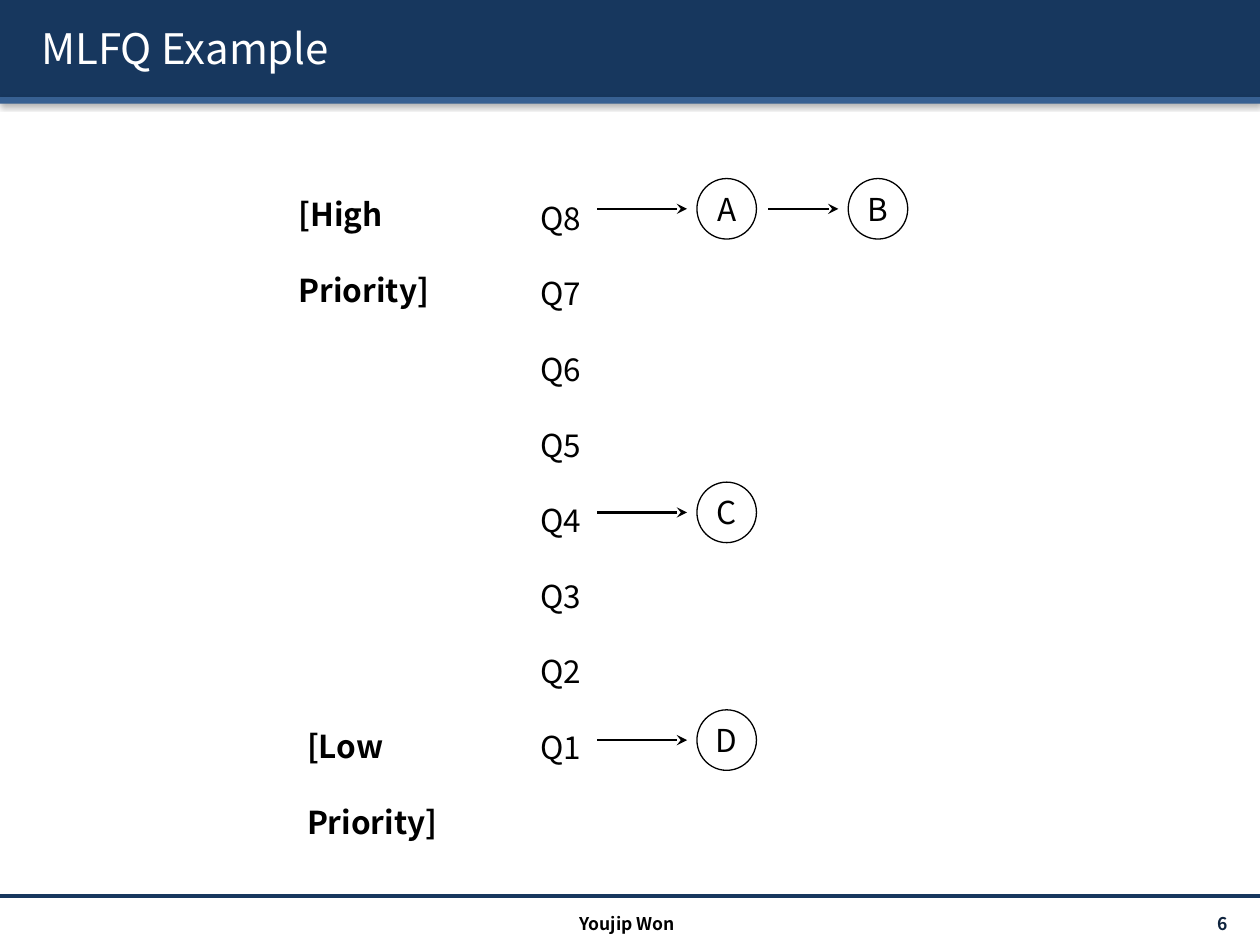
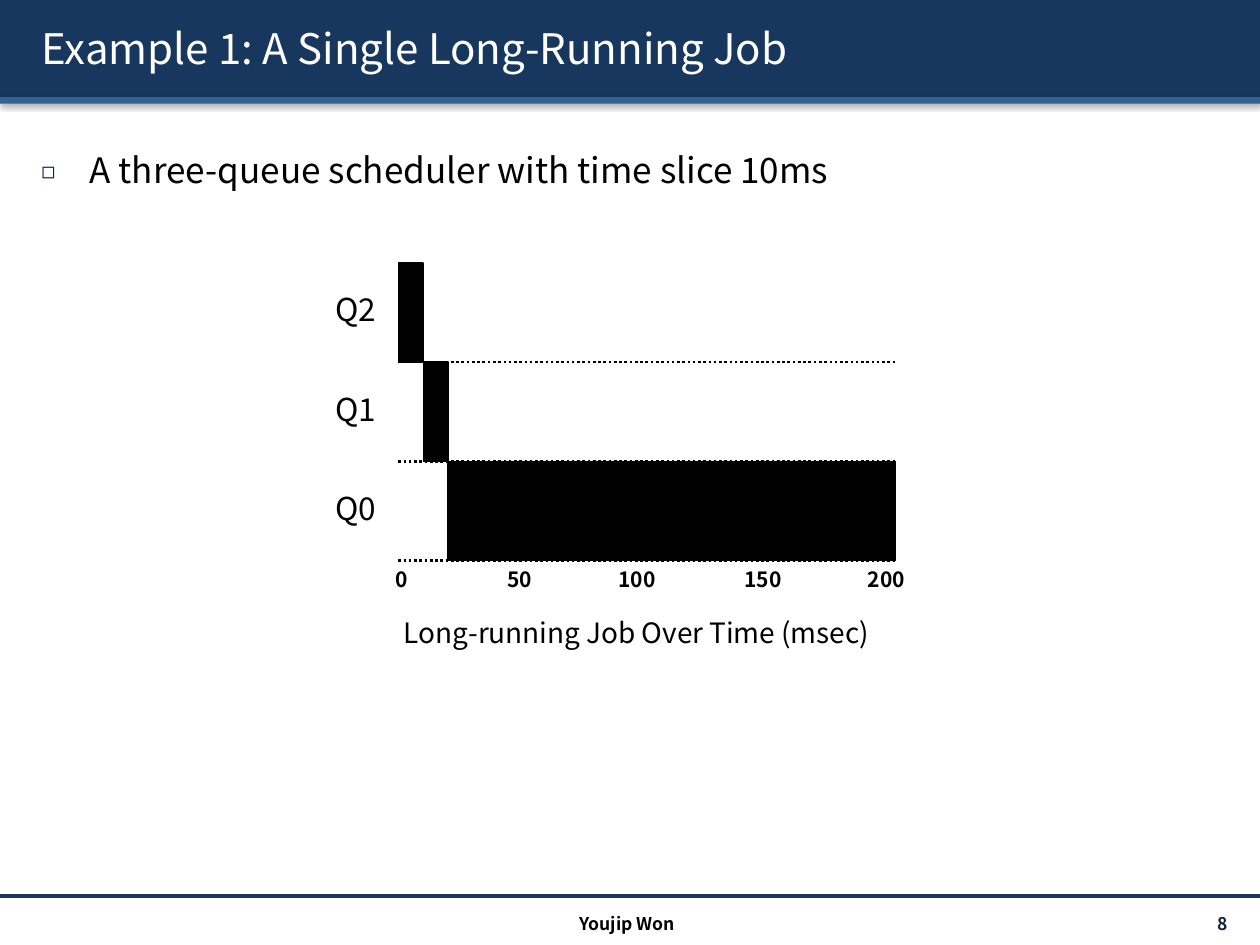
"""Build two lecture slides on the multi-level feedback queue."""
from lxml import etree
from pptx import Presentation
from pptx.dml.color import RGBColor
from pptx.enum import dml, shapes, text
from pptx.oxml import ns
from pptx.util import Cm, Pt

FONT = "Noto Sans CJK KR"
NAVY = RGBColor(0x17, 0x37, 0x5E)
STEEL = RGBColor(0x37, 0x60, 0x92)
INK = RGBColor(0x0F, 0x24, 0x3E)
BULLET = RGBColor(0x00, 0x20, 0x60)
BLACK = RGBColor(0, 0, 0)
WHITE = RGBColor(255, 255, 255)
LEFT, CENTER, RIGHT = text.PP_ALIGN.LEFT, text.PP_ALIGN.CENTER, text.PP_ALIGN.RIGHT
TOP, MIDDLE = text.MSO_ANCHOR.TOP, text.MSO_ANCHOR.MIDDLE
RECT, OVAL = shapes.MSO_SHAPE.RECTANGLE, shapes.MSO_SHAPE.OVAL

AUTHOR = "Youjip Won"
MLFQ = {
    "title": "MLFQ Example",
    "number": 6,
    "queues": ["Q8", "Q7", "Q6", "Q5", "Q4", "Q3", "Q2", "Q1"],
    "jobs": {"Q8": ["A", "B"], "Q4": ["C"], "Q1": ["D"]},
    "priorities": [("[High Priority]", 5.77, 3.05, 1.55), ("[Low Priority]", 5.94, 13.77, 1.8)],
}
LONG_JOB = {
    "title": "Example 1: A Single Long-Running Job",
    "number": 8,
    "body": "A three-queue scheduler with time slice 10ms",
    "runs": [("Q2", 0, 10), ("Q1", 10, 20), ("Q0", 20, 200)],
    "ticks": [("0", 8.03), ("50", 10.48), ("100", 12.84), ("150", 15.38), ("200", 17.87)],
    "caption": "Long-running Job Over Time (msec)",
}
TICK_WIDTHS = {1: 0.61, 2: 1.19, 3: 1.55}


def sub(parent, tag, **attrs):
    """Append a drawing element with attributes."""
    el = etree.SubElement(parent, ns.qn(tag))
    for key, value in attrs.items():
        el.set(key, str(value))
    return el


def shade(effects, blur, dist, angle, alpha):
    """Put a black outer shadow into an effect list."""
    sh = sub(effects, "a:outerShdw", blurRad=Pt(blur), dist=Pt(dist),
             dir=angle * 60000, algn="tl", rotWithShape=0)
    sub(sub(sh, "a:srgbClr", val=BLACK), "a:alpha", val=alpha * 1000)


def write(tf, *lines, size=18, color=BLACK, bold=False, align=LEFT, anchor=TOP, spacing=None):
    """Fill a text frame, one paragraph for each line."""
    tf.word_wrap = True
    tf.vertical_anchor = anchor
    for i, line in enumerate(lines):
        p = tf.add_paragraph() if i else tf.paragraphs[0]
        p.alignment = align
        if spacing:
            p.line_spacing = spacing
        r = p.add_run()
        r.text = line
        r.font.name, r.font.size, r.font.bold = FONT, Pt(size), bold
        r.font.color.rgb = color


def add_text(parent, box, *lines, grow=True, **fmt):
    """Add a text box at box, given in centimetres."""
    tf = parent.add_textbox(*map(Cm, box)).text_frame
    write(tf, *lines, **fmt)
    tf.auto_size = text.MSO_AUTO_SIZE.SHAPE_TO_FIT_TEXT if grow else text.MSO_AUTO_SIZE.NONE


def add_box(parent, kind, box, fill, line=None):
    """Add a filled preset shape."""
    sp = parent.add_shape(kind, *map(Cm, box))
    sp.shadow.inherit = False
    sp.fill.solid()
    sp.fill.fore_color.rgb = fill
    if line is None:
        sp.line.fill.background()
    else:
        sp.line.color.rgb = line
        sp.line.width = Pt(0.75)
    return sp


def add_line(parent, x1, x2, y, color=BLACK, width=1.5, dash=None, arrow=False):
    """Add a horizontal line or arrow."""
    c = parent.add_connector(shapes.MSO_CONNECTOR.STRAIGHT, Cm(x1), Cm(y), Cm(x2), Cm(y))
    c.line.color.rgb = color
    c.line.width = Pt(width)
    if dash:
        c.line.dash_style = dash
    if arrow:
        sub(c.line._get_or_add_ln(), "a:tailEnd", type="stealth")
    sub(c._element.spPr, "a:effectLst")


def place(sp, box):
    """Move a placeholder to box."""
    sp.left, sp.top, sp.width, sp.height = map(Cm, box)
    sp.text_frame.auto_size = text.MSO_AUTO_SIZE.NONE


def add_slide(prs, layout, content):
    """Add a slide with the shared bands, title and footer."""
    s = prs.slides.add_slide(prs.slide_layouts[layout])
    for top, height, fill in [(0, 1.96, NAVY), (1.96, 0.13, STEEL)]:
        band = add_box(s.shapes, RECT, (0, top, 25.4, height), fill)
        shade(band._element.spPr.find(ns.qn("a:effectLst")), 3.1, 1.6, 90, 38)
    add_line(s.shapes, 0, 25.4, 18.06, color=NAVY, width=2)
    title = s.shapes.title
    place(title, (0.58, 0.15, 24.4, 1.63))
    write(title.text_frame, content["title"], size=24, color=WHITE, anchor=MIDDLE)
    r = title.text_frame.paragraphs[0].runs[0]
    effects = etree.Element(ns.qn("a:effectLst"))
    r.font._element.find(ns.qn("a:solidFill")).addnext(effects)
    shade(effects, 0, 2, 45, 100)
    s.shapes._spTree.append(title._element)
    add_text(s.shapes, (22.12, 18.31, 2.97, 0.61), f"{content['number']} ", grow=False,
             size=10, color=INK, bold=True, align=RIGHT, anchor=MIDDLE)
    add_text(s.shapes, (8.43, 18.29, 8.43, 0.61), AUTHOR, grow=False,
             size=10, bold=True, align=CENTER)
    return s


def build_mlfq(prs):
    """Draw the queues and the jobs waiting in them."""
    s = add_slide(prs, 5, MLFQ)
    row_y, row_step, width, height, gap = 4.21, 1.53, 1.2, 1.22, 0.2
    add_text(s.shapes, (10.64, 3.12, 1.4, 12.32), *MLFQ["queues"], spacing=2.0)
    for label, x, y, h in MLFQ["priorities"]:
        add_text(s.shapes, (x, y, 4.7, h), label, bold=True, spacing=2.0)
    for queue, jobs in MLFQ["jobs"].items():
        y = row_y + row_step * MLFQ["queues"].index(queue)
        start = 12.04
        for i, job in enumerate(jobs):
            x = 14.05 + 3.05 * i
            add_line(s.shapes, start, x - gap, y, arrow=True)
            sp = add_box(s.shapes, OVAL, (x, y - height / 2, width, height), WHITE, BLACK)
            write(sp.text_frame, job, align=CENTER, anchor=MIDDLE)
            tf = sp.text_frame
            tf.margin_left = tf.margin_right = Cm(0.2)
            start = x + width + 0.24


def build_long_job(prs):
    """Draw the time line of one job moving down the queues."""
    s = add_slide(prs, 1, LONG_JOB)
    body = s.placeholders[1]
    place(body, (0.58, 2.44, 24.4, 15.29))
    write(body.text_frame, LONG_JOB["body"], size=20, spacing=1.5)
    p = body.text_frame.paragraphs[0]
    p.space_before = Pt(0)
    ppr = p._p.get_or_add_pPr()
    ppr.set("marL", str(Cm(0.97)))
    ppr.set("indent", str(-Cm(0.97)))
    sub(sub(ppr, "a:buClr"), "a:srgbClr", val=BULLET)
    sub(ppr, "a:buSzPct", val=65000)
    sub(ppr, "a:buFont", typeface=FONT)
    sub(ppr, "a:buChar", char="◻")

    left, top, width, row = 8.03, 5.3, 10.03, 2.0
    scale = width / LONG_JOB["runs"][-1][2]
    group = s.shapes.add_group_shape().shapes
    for i, (queue, start, end) in enumerate(LONG_JOB["runs"]):
        y = top + row * i
        add_line(group, left, left + width, y + row, dash=dml.MSO_LINE.ROUND_DOT)
        add_box(group, RECT, (left + start * scale, y, (end - start) * scale, row), BLACK, BLACK)
        add_text(group, (6.3, y + 0.43, 1.75, 1.02), queue, align=CENTER)
    for label, x in LONG_JOB["ticks"]:
        w = TICK_WIDTHS[len(label)]
        add_text(group, (x - w / 2, top + 3 * row, w, 0.76), label,
                 size=12, bold=True, align=CENTER)
    add_text(s.shapes, (6.98, 12.29, 11.71, 0.94), LONG_JOB["caption"], size=16, align=CENTER)


def main():
    """Build and save the presentation."""
    prs = Presentation()
    prs.slide_width, prs.slide_height = Cm(25.4), Cm(19.05)
    build_mlfq(prs)
    build_long_job(prs)
    prs.save("out.pptx")


if __name__ == "__main__":
    main()
